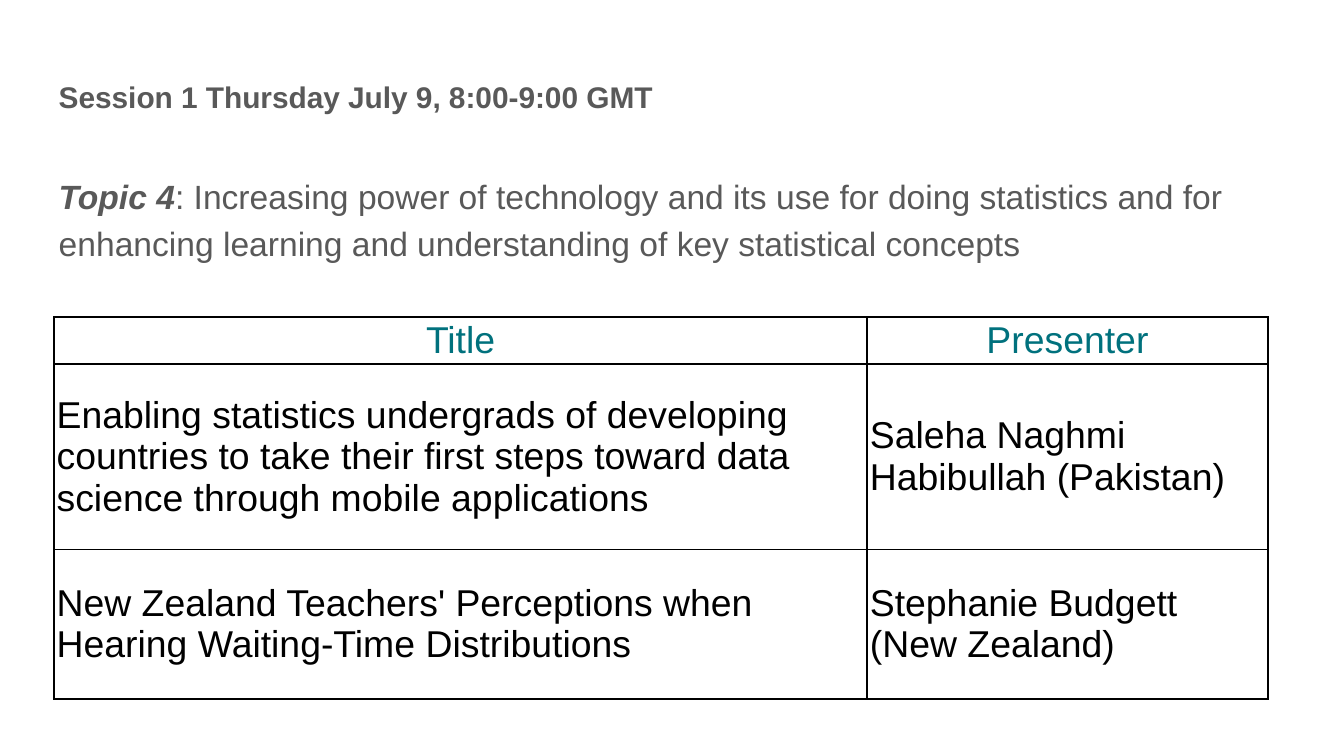
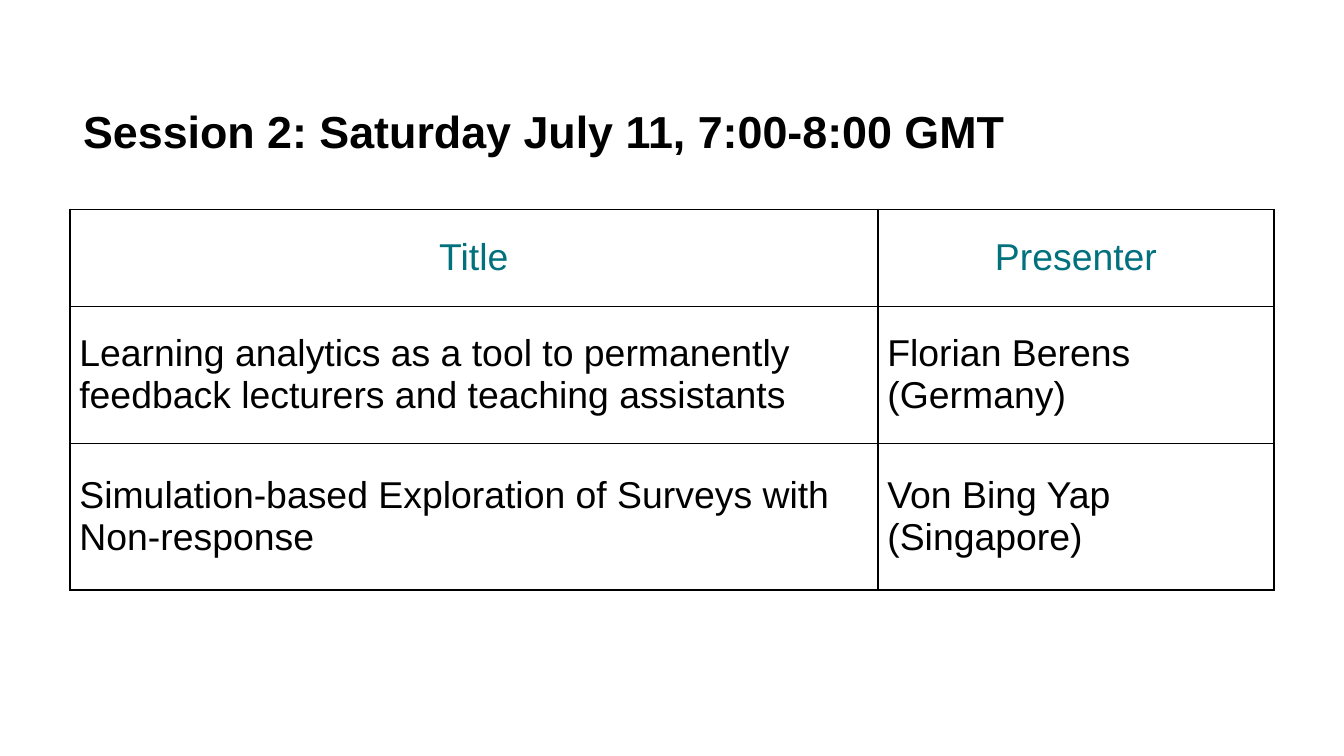
"""Build two conference session slides, each with a heading and a table of talks."""
from dataclasses import dataclass

from lxml import etree
from pptx import Presentation
from pptx.dml.color import RGBColor
from pptx.enum.text import MSO_ANCHOR, MSO_AUTO_SIZE, PP_ALIGN
from pptx.oxml.ns import qn
from pptx.util import Cm, Pt

TOP, MIDDLE = MSO_ANCHOR.TOP, MSO_ANCHOR.MIDDLE
LEFT, CENTER = PP_ALIGN.LEFT, PP_ALIGN.CENTER
NO_FIT = MSO_AUTO_SIZE.NONE
TITLE_AND_CONTENT, TITLE_ONLY = 1, 5
BORDER_SIDES = ("a:lnL", "a:lnR", "a:lnT", "a:lnB")
TABLE_HEADINGS = ("Title", "Presenter")


@dataclass(frozen=True)
class Theme:
    font: str = "Arial"
    ink: str = "000000"
    grey: str = "595959"
    teal: str = "00717D"
    session_size: int = 16
    topic_size: int = 18
    table_size: int = 20
    heading_size: int = 24
    border_width: int = 1
    text_margin: float = 0.25


class SessionDeck:
    def __init__(self, theme):
        self.theme = theme
        self.deck = Presentation()
        self.deck.slide_width, self.deck.slide_height = Cm(25.4), Cm(14.29)
        self.page = None

    def add_page(self, layout):
        self.page = self.deck.slides.add_slide(self.deck.slide_layouts[layout])

    def style_span(self, span, size, color, bold=False, italic=False):
        font = span.font
        font.name, font.size = self.theme.font, Pt(size)
        font.bold, font.italic = bold, italic
        font.color.rgb = RGBColor.from_string(color)

    def place(self, box, area, anchor):
        box.left, box.top, box.width, box.height = (Cm(value) for value in area)
        frame = box.text_frame
        frame.word_wrap, frame.auto_size = True, NO_FIT
        frame.vertical_anchor = anchor
        margin = Cm(self.theme.text_margin)
        frame.margin_left = frame.margin_right = margin
        frame.margin_top = frame.margin_bottom = margin
        return frame

    def title(self, text, area, size, color, anchor=TOP):
        frame = self.place(self.page.shapes.title, area, anchor)
        frame.text = text
        para = frame.paragraphs[0]
        para.alignment = LEFT
        self.style_span(para.runs[0], size, color, bold=True)

    def topic(self, label, text, area):
        frame = self.place(self.page.placeholders[1], area, TOP)
        frame.text = label
        para = frame.paragraphs[0]
        para.alignment, para.line_spacing = LEFT, 1.15
        para.space_before, para.space_after = Pt(0), Pt(16)
        properties = para._p.get_or_add_pPr()
        properties.set("marL", "0")
        properties.set("indent", "0")
        etree.SubElement(properties, qn("a:buNone"))
        para.add_run().text = text
        lead, rest = para.runs
        size, color = self.theme.topic_size, self.theme.grey
        self.style_span(lead, size, color, bold=True, italic=True)
        self.style_span(rest, size, color)

    def border(self, cell):
        properties = cell._tc.get_or_add_tcPr()
        for side in BORDER_SIDES:
            line = etree.SubElement(properties, qn(side), w=str(Pt(self.theme.border_width)))
            fill = etree.SubElement(line, qn("a:solidFill"))
            etree.SubElement(fill, qn("a:srgbClr"), val=self.theme.ink)

    def cell(self, cell, text, margin, is_heading):
        self.border(cell)
        cell.fill.background()
        cell.vertical_anchor = MIDDLE
        cell.margin_left = cell.margin_right = Cm(margin)
        cell.margin_top = cell.margin_bottom = Cm(margin)
        cell.text = text
        para = cell.text_frame.paragraphs[0]
        para.alignment = CENTER if is_heading else LEFT
        para.space_before = Pt(12)
        color = self.theme.teal if is_heading else self.theme.ink
        self.style_span(para.runs[0], self.theme.table_size, color)

    def talks(self, talks, left, top, widths, heights, margin):
        rows = [TABLE_HEADINGS, *talks]
        table = self.page.shapes.add_table(
            len(rows), len(widths), Cm(left), Cm(top), Cm(sum(widths)), Cm(sum(heights))
        ).table
        table.first_row = table.horz_banding = False
        for column, width in zip(table.columns, widths):
            column.width = Cm(width)
        for row, height in zip(table.rows, heights):
            row.height = Cm(height)
        for row_index, texts in enumerate(rows):
            for column_index, text in enumerate(texts):
                self.cell(table.cell(row_index, column_index), text, margin, row_index == 0)


def main():
    theme = Theme()
    sessions = SessionDeck(theme)

    sessions.add_page(TITLE_AND_CONTENT)
    sessions.title(
        "Session 1 Thursday July 9, 8:00-9:00 GMT",
        (0.86, 1.24, 23.67, 1.6), theme.session_size, theme.grey,
    )
    sessions.topic(
        "Topic 4",
        ": Increasing power of technology and its use for doing statistics and for "
        "enhancing learning and understanding of key statistical concepts",
        (0.86, 2.97, 23.67, 9.73),
    )
    sessions.talks(
        [
            ("Enabling statistics undergrads of developing countries to take their first "
             "steps toward data science through mobile applications",
             "Saleha Naghmi Habibullah (Pakistan)"),
            ("New Zealand Teachers' Perceptions when Hearing Waiting-Time Distributions",
             "Stephanie Budgett (New Zealand)"),
        ],
        left=1.02, top=5.99, widths=(15.37, 7.57), heights=(0.79, 3.51, 2.82), margin=0.05,
    )

    sessions.add_page(TITLE_ONLY)
    sessions.title(
        "Session 2: Saturday July 11, 7:00-8:00 GMT",
        (1.32, 1.83, 22.76, 1.27), theme.heading_size, theme.ink, MIDDLE,
    )
    sessions.talks(
        [
            ("Learning analytics as a tool to permanently feedback lecturers and "
             "teaching assistants", "Florian Berens (Germany)"),
            ("Simulation-based Exploration of Surveys with Non-response",
             "Von Bing Yap (Singapore)"),
        ],
        left=1.32, top=3.96, widths=(15.27, 7.49), heights=(1.83, 2.59, 2.77), margin=0.18,
    )

    sessions.deck.save("out.pptx")


if __name__ == "__main__":
    main()
